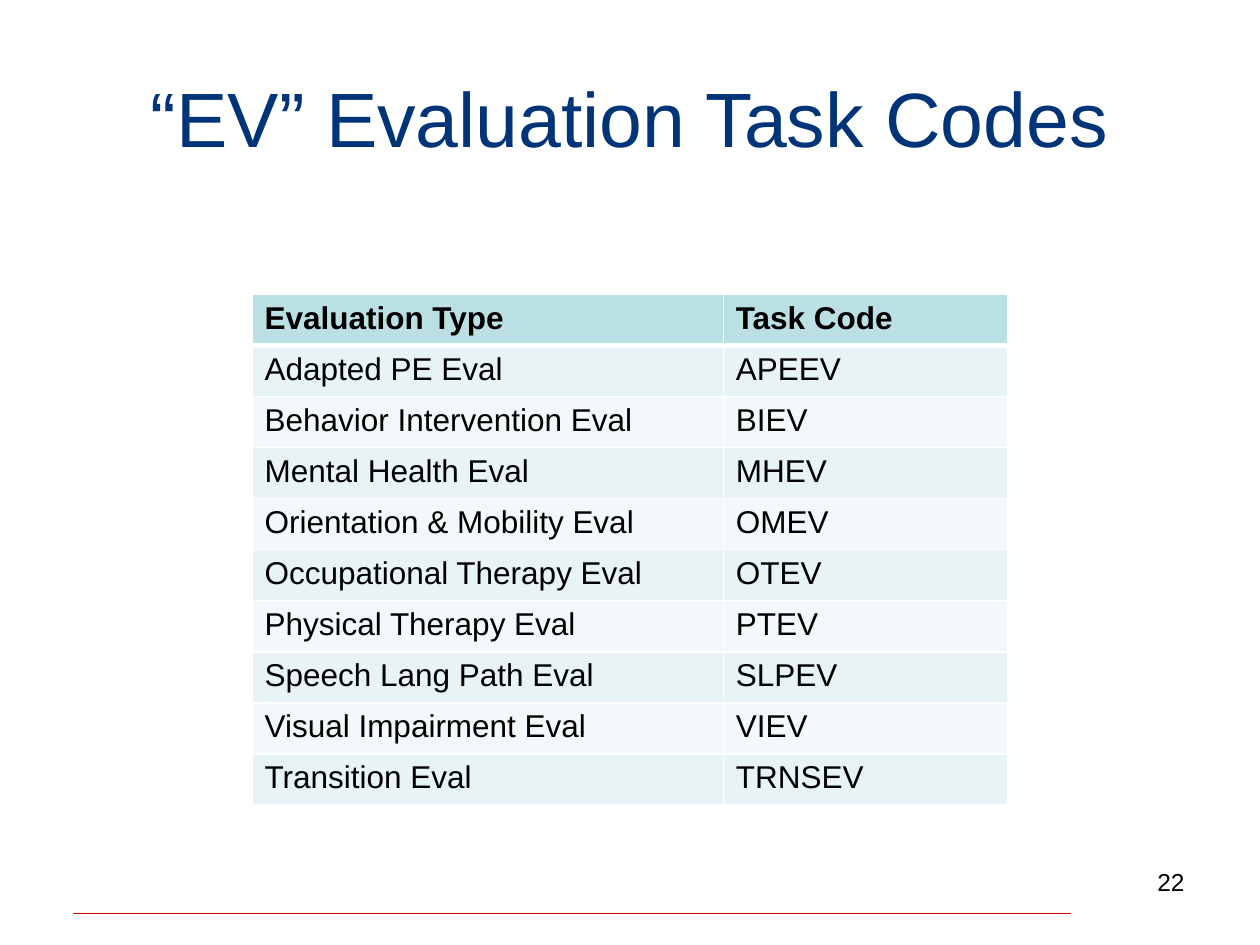
from lxml.etree import SubElement
from pptx import Presentation
from pptx.dml.color import RGBColor
from pptx.enum.shapes import MSO_CONNECTOR
from pptx.enum.text import MSO_ANCHOR, PP_ALIGN
from pptx.oxml.ns import qn
from pptx.util import Cm, Pt

COLORS = {
    "title": "003479",
    "text": "000000",
    "rule": "CC0000",
    "border": "FFFFFF",
    "header": "BBE0E3",
    "odd": "E7F3F4",
    "even": "F3F9FA",
}

EVALUATIONS = [
    ("Evaluation Type", "Task Code"),
    ("Adapted PE Eval", "APEEV"),
    ("Behavior Intervention Eval", "BIEV"),
    ("Mental Health Eval", "MHEV"),
    ("Orientation & Mobility Eval", "OMEV"),
    ("Occupational Therapy Eval", "OTEV"),
    ("Physical Therapy Eval", "PTEV"),
    ("Speech Lang Path Eval", "SLPEV"),
    ("Visual Impairment Eval", "VIEV"),
    ("Transition Eval", "TRNSEV"),
]


class SlideBuilder:
    """Holds the style and the slide; lengths are in centimetres."""

    font = "Arial"

    def __init__(self, slide):
        self.slide = slide

    def add_run(self, paragraph, text, size, color="text", bold=False):
        run = paragraph.add_run()
        run.text = text
        run.font.name = self.font
        run.font.size = Pt(size)
        run.font.bold = bold
        run.font.color.rgb = RGBColor.from_string(COLORS[color])

    def text(self, text, left, top, width, height, size, align,
             color="text", anchor=MSO_ANCHOR.TOP):
        frame = self.slide.shapes.add_textbox(
            Cm(left), Cm(top), Cm(width), Cm(height)).text_frame
        frame.word_wrap = True
        frame.vertical_anchor = anchor
        paragraph = frame.paragraphs[0]
        paragraph.alignment = align
        self.add_run(paragraph, text, size, color)

    def rule(self, left, right, y):
        line = self.slide.shapes.add_connector(
            MSO_CONNECTOR.STRAIGHT, Cm(left), Cm(y), Cm(right), Cm(y))
        line.line.color.rgb = RGBColor.from_string(COLORS["rule"])
        line.line.width = Pt(0.75)
        SubElement(line._element.spPr, qn("a:effectLst"))

    def borders(self, cell, top=1, bottom=1):
        """Draw the four cell borders; call before the fill is set."""
        properties = cell._tc.get_or_add_tcPr()
        for side, width in (("L", 1), ("R", 1), ("T", top), ("B", bottom)):
            line = SubElement(properties, qn(f"a:ln{side}"), w=str(Pt(width)))
            fill = SubElement(line, qn("a:solidFill"))
            SubElement(fill, qn("a:srgbClr"), val=COLORS["border"])

    def table(self, rows, left, top, column_widths, row_height):
        table = self.slide.shapes.add_table(
            len(rows), len(column_widths), Cm(left), Cm(top),
            Cm(sum(column_widths)), Cm(row_height * len(rows))).table
        for column, width in zip(table.columns, column_widths):
            column.width = Cm(width)
        for r, values in enumerate(rows):
            table.rows[r].height = Cm(row_height)
            band = "header" if r == 0 else "odd" if r % 2 else "even"
            for c, value in enumerate(values):
                cell = table.cell(r, c)
                self.borders(cell, top=3 if r == 1 else 1,
                             bottom=3 if r == 0 else 1)
                cell.fill.solid()
                cell.fill.fore_color.rgb = RGBColor.from_string(COLORS[band])
                self.add_run(cell.text_frame.paragraphs[0], value, 18,
                             bold=r == 0)


def main():
    deck = Presentation()
    deck.slide_width, deck.slide_height = Cm(25.4), Cm(19.05)
    builder = SlideBuilder(deck.slides.add_slide(deck.slide_layouts[6]))
    builder.rule(1.47, 21.59, 18.42)
    builder.text("“EV” Evaluation Task Codes", 1.27, 0.76, 22.86, 3.18, 44,
                 PP_ALIGN.CENTER, "title", MSO_ANCHOR.MIDDLE)
    builder.text("22", 18.21, 17.35, 5.92, 1.32, 14, PP_ALIGN.RIGHT)
    builder.table(EVALUATIONS, 5.08, 5.93, (9.5, 5.74), 1.03)
    deck.save("out.pptx")


if __name__ == "__main__":
    main()
